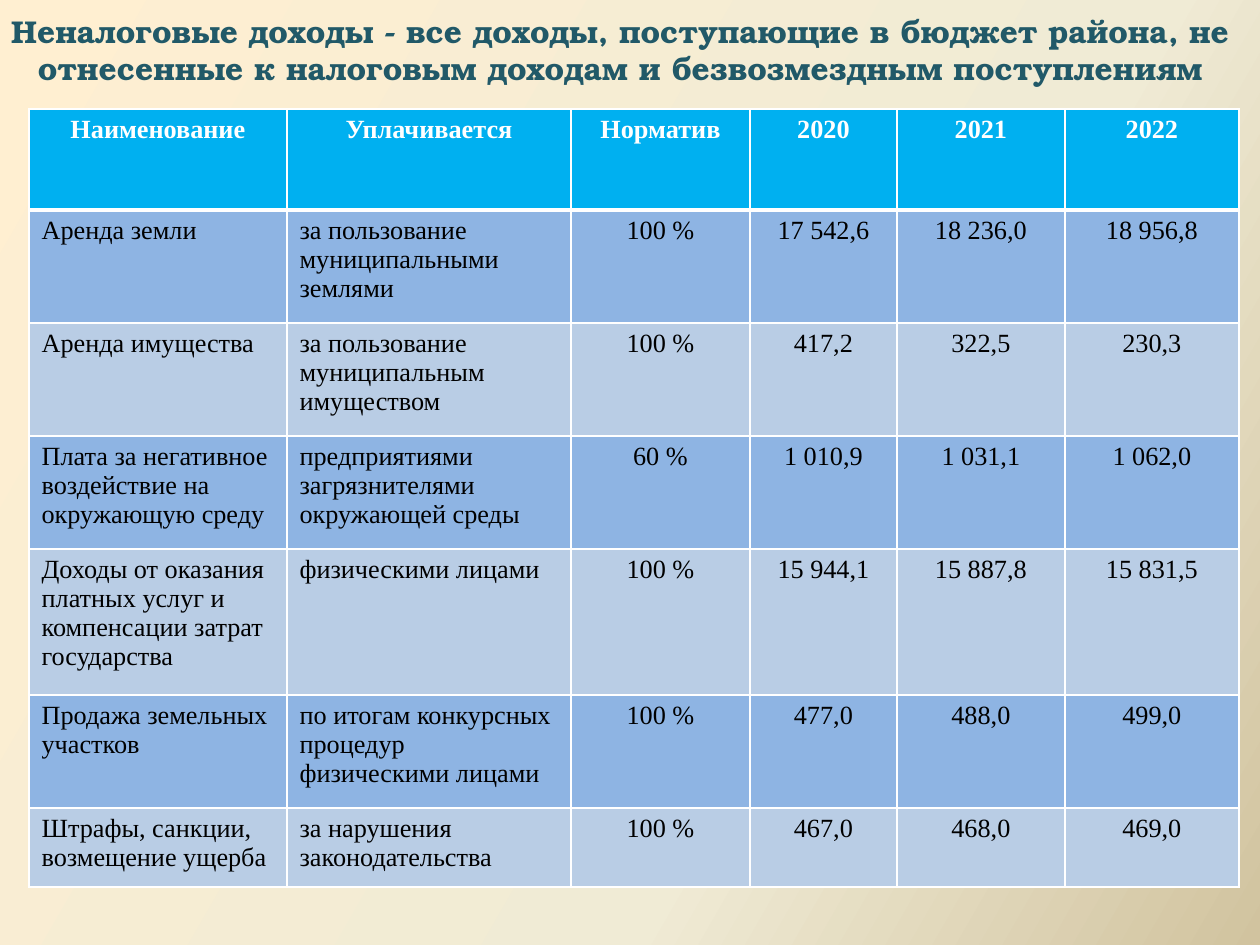
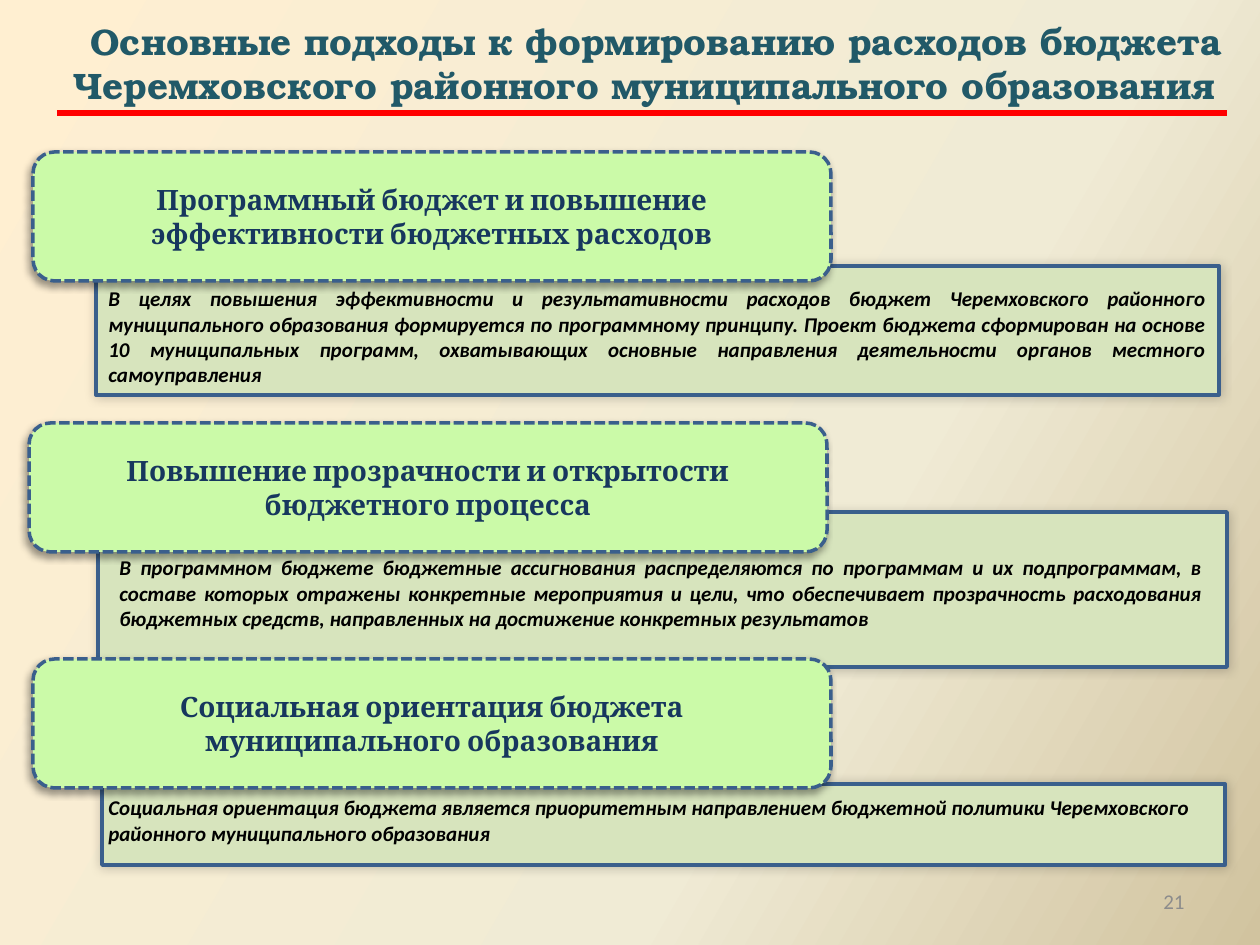
"""Build two budget slides: a non-tax revenue table and the spending approaches."""
from dataclasses import dataclass

from lxml.etree import SubElement
from pptx import Presentation
from pptx.dml.color import RGBColor
from pptx.enum.dml import MSO_LINE
from pptx.enum.shapes import MSO_CONNECTOR, MSO_SHAPE as SHAPE
from pptx.enum.text import MSO_ANCHOR as ANCHOR, PP_ALIGN as ALIGN
from pptx.oxml.ns import qn
from pptx.util import Pt

PX = 914400 / 126
SLIDE_SIZE = (1260, 945)


@dataclass(frozen=True)
class Font:
    name: str
    size: int
    color: str
    bold: bool = False
    italic: bool = False


@dataclass(frozen=True)
class Theme:
    backdrop = ((0, "FFEFD1"), (65, "F0EBD5"), (100, "D1C39F"))
    backdrop_angle = 30
    header_fill = "00B0F0"
    row_fills = ("8EB4E3", "B9CDE5")
    grid = "FFFFFF"
    panel = "D7E4BD"
    card = "CBFAA8"
    outline = "3A5F8C"
    rule = "FF0000"
    panel_shadow = dict(alpha=20, blur=6, dist=0, angle=225)
    card_shadow = dict(alpha=40, blur=4, dist=3, angle=135)
    table_title = Font("TeX Gyre Bonum", 18, "215968", True)
    approach_title = Font("TeX Gyre Bonum", 21, "215968", True)
    header = Font("Times New Roman", 15, "FFFFFF", True)
    cell = Font("Times New Roman", 15, "000000")
    card_text = Font("Cambria", 16, "17375E", True)
    body = Font("Calibri", 12, "000000", True, True)
    page = Font("Calibri", 12, "8C8C8C")


T = Theme()

REVENUE_TITLE = ("Неналоговые доходы - все доходы, поступающие в бюджет района, не "
                 "отнесенные к налоговым доходам и безвозмездным поступлениям")
REVENUE_ROWS = [
    ("Наименование", "Уплачивается", "Норматив", "2020", "2021", "2022"),
    ("Аренда земли", "за пользование муниципальными землями",
     "100 %", "17 542,6", "18 236,0", "18 956,8"),
    ("Аренда имущества", "за пользование муниципальным имуществом",
     "100 %", "417,2", "322,5", "230,3"),
    ("Плата за негативное воздействие на окружающую среду",
     "предприятиями загрязнителями окружающей среды",
     "60 %", "1 010,9", "1 031,1", "1 062,0"),
    ("Доходы от оказания платных услуг и компенсации затрат государства",
     "физическими лицами", "100 %", "15 944,1", "15 887,8", "15 831,5"),
    ("Продажа земельных участков", "по итогам конкурсных процедур физическими лицами",
     "100 %", "477,0", "488,0", "499,0"),
    ("Штрафы, санкции,\nвозмещение ущерба", "за нарушения законодательства",
     "100 %", "467,0", "468,0", "469,0"),
]
TABLE_ORIGIN = (29, 109)
COL_WIDTHS = (258, 284, 179, 147, 168, 174)
ROW_HEIGHTS = (101, 113, 113, 113, 146, 113, 79)
TEXT_COLS = 2

APPROACH_TITLE = ("Основные подходы к формированию расходов бюджета "
                  "Черемховского районного муниципального образования")
PAGE_NUMBER = "21"
CARD_SIZE = (798, 129)
APPROACHES = [
    dict(heading="Программный бюджет и повышение эффективности бюджетных расходов",
         text="В целях повышения эффективности и результативности расходов бюджет "
              "Черемховского районного муниципального образования формируется по "
              "программному принципу. Проект бюджета сформирован на основе 10 "
              "муниципальных программ, охватывающих основные направления деятельности "
              "органов местного самоуправления",
         card=(33, 152), panel=(96, 266, 1123, 129), body=(96, 280, 1123, 115),
         align=ALIGN.JUSTIFY, top=6),
    dict(heading="Повышение прозрачности и открытости\nбюджетного процесса",
         text="В программном бюджете бюджетные ассигнования распределяются по программам "
              "и их подпрограммам, в составе которых отражены конкретные мероприятия и "
              "цели, что обеспечивает прозрачность расходования бюджетных средств, "
              "направленных на достижение конкретных результатов",
         card=(29, 423), panel=(98, 512, 1129, 155), body=(107, 519, 1108, 118),
         align=ALIGN.JUSTIFY, top=36),
    dict(heading="Социальная ориентация бюджета\nмуниципального образования",
         text="Социальная ориентация бюджета является приоритетным направлением "
              "бюджетной политики Черемховского районного муниципального образования",
         card=(33, 659), panel=(102, 784, 1123, 81), body=(96, 789, 1123, 63),
         align=ALIGN.LEFT, top=6),
]


def emu(*lengths):
    return [round(v * PX) for v in lengths]


def rgb(color):
    return RGBColor.from_string(color)


def add_color(parent, color):
    return SubElement(parent, qn("a:srgbClr"), val=color)


def write(tf, text, font, align=ALIGN.LEFT, anchor=ANCHOR.TOP):
    tf.word_wrap = True
    tf.vertical_anchor = anchor
    for i, line in enumerate(text.split("\n")):
        p = tf.paragraphs[0] if i == 0 else tf.add_paragraph()
        p.alignment = align
        r = p.add_run()
        r.text = line
        f = r.font
        f.name, f.size, f.bold, f.italic = font.name, Pt(font.size), font.bold, font.italic
        f.color.rgb = rgb(font.color)


def add_text(s, box, text, font, align, anchor=ANCHOR.TOP, top=6, bottom=6):
    sp = s.shapes.add_textbox(*emu(*box))
    tf = sp.text_frame
    tf.margin_top, tf.margin_bottom = emu(top, bottom)
    write(tf, text, font, align, anchor)
    return sp


def add_title(s, box, text, font, bottom):
    return add_text(s, box, text, font, ALIGN.CENTER, ANCHOR.MIDDLE, bottom=bottom)


def add_block(s, preset, box, fill, shadow):
    sp = s.shapes.add_shape(preset, *emu(*box))
    sp.fill.solid()
    sp.fill.fore_color.rgb = rgb(fill)
    sp.line.color.rgb = rgb(T.outline)
    sp.line.width = Pt(2)
    sp.shadow.inherit = False
    effects = sp._element.spPr.find(qn("a:effectLst"))
    outer = SubElement(effects, qn("a:outerShdw"), blurRad=str(Pt(shadow["blur"])),
                       dist=str(Pt(shadow["dist"])), dir=str(shadow["angle"] * 60000),
                       rotWithShape="0")
    SubElement(add_color(outer, "000000"), qn("a:alpha"), val=str(shadow["alpha"] * 1000))
    return sp


def set_backdrop(master):
    master.background.fill.gradient()
    grad = next(master._element.iter(qn("p:bg"))).find(".//" + qn("a:gradFill"))
    for child in list(grad):
        grad.remove(child)
    stops = SubElement(grad, qn("a:gsLst"))
    for pos, color in T.backdrop:
        add_color(SubElement(stops, qn("a:gs"), pos=str(pos * 1000)), color)
    SubElement(grad, qn("a:lin"), ang=str(T.backdrop_angle * 60000), scaled="0")


def style_cell(cell, fill, widths):
    tc_pr = cell._tc.get_or_add_tcPr()
    for side, width in zip("LRTB", widths):
        ln = SubElement(tc_pr, qn(f"a:ln{side}"), w=str(Pt(width)))
        add_color(SubElement(ln, qn("a:solidFill")), T.grid)
    cell.fill.solid()
    cell.fill.fore_color.rgb = rgb(fill)


def build_revenue(s):
    add_title(s, (-49, 0, 1339, 137), REVENUE_TITLE, T.table_title, bottom=44)
    size = sum(COL_WIDTHS), sum(ROW_HEIGHTS)
    table = s.shapes.add_table(len(ROW_HEIGHTS), len(COL_WIDTHS),
                               *emu(*TABLE_ORIGIN, *size)).table
    for col, width in zip(table.columns, emu(*COL_WIDTHS)):
        col.width = width
    for row, height in zip(table.rows, emu(*ROW_HEIGHTS)):
        row.height = height
    for i, values in enumerate(REVENUE_ROWS):
        fill = T.row_fills[(i - 1) % 2] if i else T.header_fill
        widths = (1, 1, 3 if i == 1 else 1, 1 if i else 3)
        for j, value in enumerate(values):
            cell = table.cell(i, j)
            style_cell(cell, fill, widths)
            align = ALIGN.LEFT if i and j < TEXT_COLS else ALIGN.CENTER
            write(cell.text_frame, value, T.cell if i else T.header, align)


def build_approaches(s):
    for item in APPROACHES:
        add_block(s, SHAPE.FLOWCHART_PROCESS, item["panel"], T.panel, T.panel_shadow)
        body = add_text(s, item["body"], item["text"], T.body, item["align"], top=item["top"])
        body.fill.solid()
        body.fill.fore_color.rgb = rgb(T.panel)
        if item["body"][0] <= item["panel"][0]:
            body.fill.background()
        card = add_block(s, SHAPE.FLOWCHART_ALTERNATE_PROCESS, (*item["card"], *CARD_SIZE),
                         T.card, T.card_shadow)
        card.line.dash_style = MSO_LINE.SQUARE_DOT
        write(card.text_frame, item["heading"], T.card_text, ALIGN.CENTER, ANCHOR.MIDDLE)
    title = add_title(s, (29, 28, 1231, 107), APPROACH_TITLE, T.approach_title, bottom=43)
    title.text_frame.paragraphs[0]._p.get_or_add_pPr().set("indent", str(emu(24)[0]))
    rule = s.shapes.add_connector(MSO_CONNECTOR.STRAIGHT, *emu(57, 113, 1227, 113))
    rule.line.color.rgb = rgb(T.rule)
    rule.line.width = Pt(3.75)
    SubElement(rule._element.spPr, qn("a:effectLst"))
    add_text(s, (903, 876, 294, 50), PAGE_NUMBER, T.page, ALIGN.RIGHT, ANCHOR.MIDDLE)


def main():
    prs = Presentation()
    prs.slide_width, prs.slide_height = emu(*SLIDE_SIZE)
    set_backdrop(prs.slide_master)
    for build in (build_revenue, build_approaches):
        build(prs.slides.add_slide(prs.slide_layouts[6]))
    prs.save("out.pptx")


if __name__ == "__main__":
    main()
